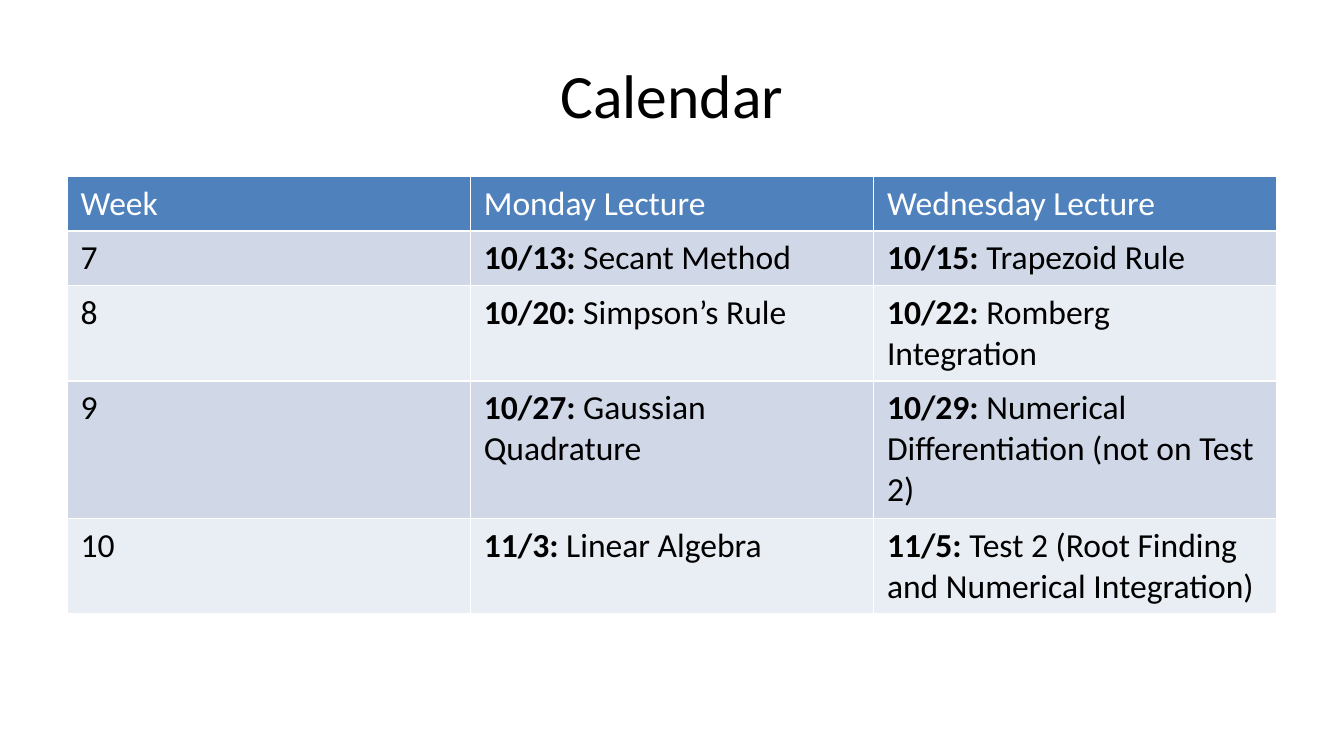
from pptx import Presentation
from pptx.dml.color import RGBColor
from pptx.enum.text import MSO_ANCHOR, PP_ALIGN
from pptx.util import Cm, Pt


def color(value):
    return RGBColor.from_string(value)


def style(font, size, value):
    font.name = "Calibri"
    font.size = Pt(size)
    font.color.rgb = color(value)


prs = Presentation()
prs.slide_width, prs.slide_height = Cm(25.4), Cm(14.28)
s = prs.slides.add_slide(prs.slide_layouts[6])

# Title
tf = s.shapes.add_textbox(Cm(1.27), Cm(0.58), Cm(22.86), Cm(2.39)).text_frame
tf.word_wrap = True
tf.vertical_anchor = MSO_ANCHOR.MIDDLE
p = tf.paragraphs[0]
p.text = "Calendar"
p.alignment = PP_ALIGN.CENTER
style(p.font, 33, "000000")

# Calendar table: the default table style supplies the white borders
rows = [
    ("Week", "Monday Lecture", "Wednesday Lecture"),
    ("7", "10/13: Secant Method", "10/15: Trapezoid Rule"),
    ("8", "10/20: Simpson’s Rule", "10/22: Romberg Integration"),
    ("9", "10/27: Gaussian Quadrature",
     "10/29: Numerical Differentiation (not on Test 2)"),
    ("10", "11/3: Linear Algebra",
     "11/5: Test 2 (Root Finding and Numerical Integration)"),
]
line_counts = [1, 1, 2, 3, 2]
heights = [Cm(0.25 + 0.78 * n) for n in line_counts]
table = s.shapes.add_table(len(rows), 3, Cm(1.27), Cm(3.33),
                           Cm(22.86), sum(heights)).table

for i, row in enumerate(rows):
    table.rows[i].height = heights[i]
    if i == 0:
        fill, ink = "4F81BD", "FFFFFF"
    else:
        fill, ink = ("D0D8E8" if i % 2 else "E9EDF4"), "000000"
    for j, text in enumerate(row):
        cell = table.cell(i, j)
        cell.fill.solid()
        cell.fill.fore_color.rgb = color(fill)
        p = cell.text_frame.paragraphs[0]
        # The date before the colon is bold
        date, colon, topic = text.rpartition(":")
        for part, bold in ((date + colon, True), (topic, False)):
            if part:
                r = p.add_run()
                r.text = part
                r.font.bold = bold
                style(r.font, 18, ink)

prs.save("out.pptx")
